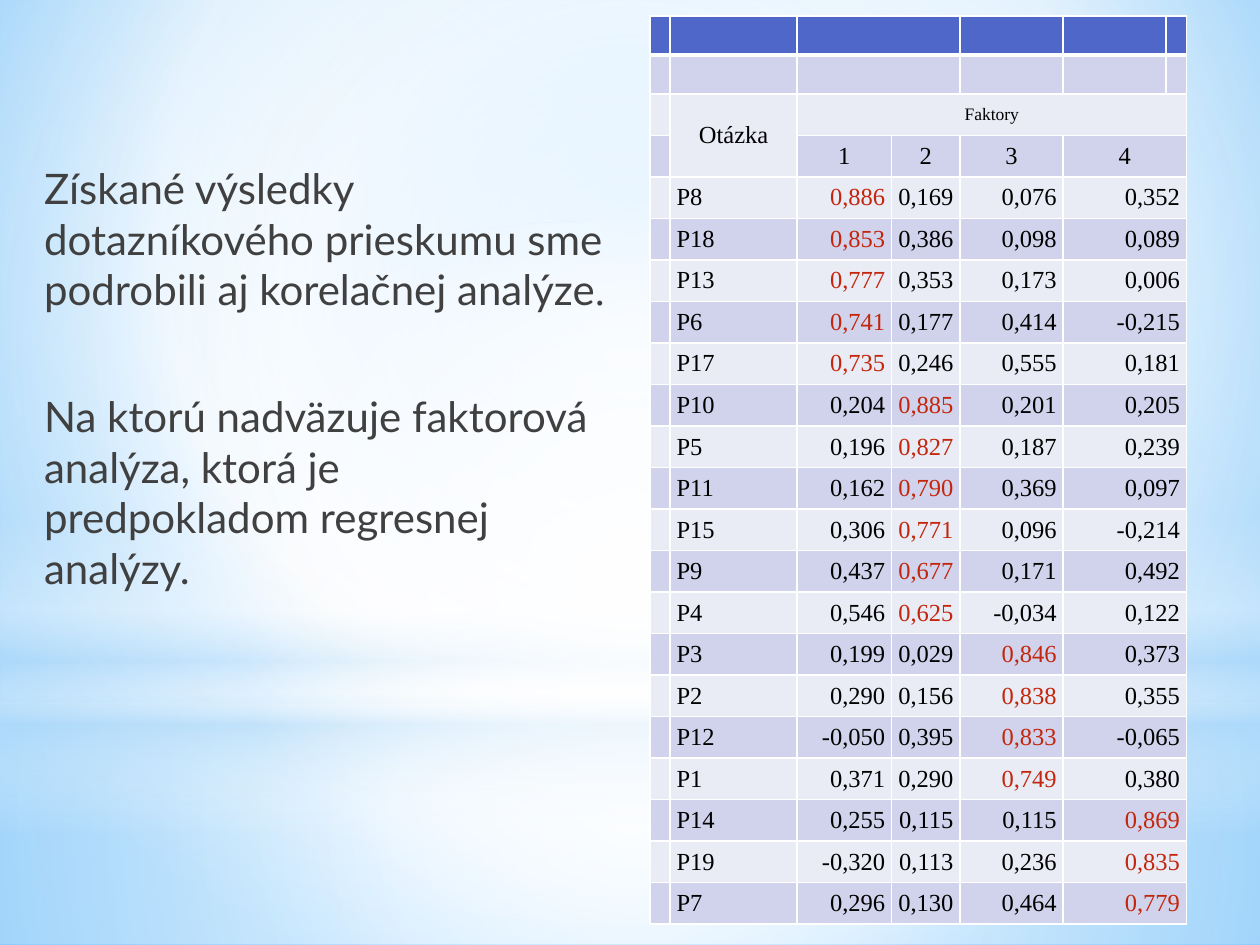
from lxml import etree
from pptx import Presentation
from pptx.dml.color import RGBColor
from pptx.enum import shapes, text
from pptx.oxml import ns
from pptx.util import Pt

BLACK = RGBColor(0, 0, 0)
GRAY = RGBColor(0x40, 0x40, 0x40)
RED = RGBColor(0xC3, 0x26, 0x0C)
HEAD = RGBColor(0x4E, 0x67, 0xC8)
BANDS = [RGBColor(0xE9, 0xEB, 0xF5), RGBColor(0xD0, 0xD3, 0xEB)]
WHITE = RGBColor(0xFF, 0xFF, 0xFF)
SKY = RGBColor(0xB4, 0xDC, 0xFA)
PALE = RGBColor(0x9E, 0xD5, 0xFF)
DEEP = RGBColor(0x5B, 0xB9, 0xFF)

SERIF, SANS = "Times New Roman", "Lato"
RECT, OVAL = shapes.MSO_SHAPE.RECTANGLE, shapes.MSO_SHAPE.OVAL
LEFT, MID, RIGHT = text.PP_ALIGN.LEFT, text.PP_ALIGN.CENTER, text.PP_ALIGN.RIGHT

# Gradient stops: place in %, colour, opacity in %
BASE = [(0, PALE, 100), (60, WHITE, 100), (100, DEEP, 100)]
CENTER = (50, 50, 50, 50)
LAYERS = [  # shape, box, stops, focus (None: top to bottom)
    (RECT, (0, 402, 720, 138),
     [(0, WHITE, 91), (37, WHITE, 76), (100, SKY, 79)], CENTER),
    (RECT, (0, 0, 720, 402),
     [(0, WHITE, 89), (48, WHITE, 62), (100, SKY, 79)], CENTER),
    (RECT, (0, 296.6, 720, 180),
     [(0, WHITE, 0), (29, WHITE, 30), (45, SKY, 40), (55, WHITE, 26),
      (65, SKY, 60), (100, WHITE, 0)], None),
    (OVAL, (0, 126, 720, 402), [(0, WHITE, 100), (56, WHITE, 0)], CENTER),
]

BODY = [  # space before, runs
    (0, [("Získané výsledky dotazníkového prieskumu sme podrobili "
          "aj korelačnej analýze", SANS), (".", SERIF)]),
    (44, [("Na ktorú nadväzuje faktorová analýza, ktorá je predpokladom "
           "regresnej analýzy.", SANS)]),
]

LOADS = [
    ("P8", "0,886", "0,169", "0,076", "0,352"),
    ("P18", "0,853", "0,386", "0,098", "0,089"),
    ("P13", "0,777", "0,353", "0,173", "0,006"),
    ("P6", "0,741", "0,177", "0,414", "-0,215"),
    ("P17", "0,735", "0,246", "0,555", "0,181"),
    ("P10", "0,204", "0,885", "0,201", "0,205"),
    ("P5", "0,196", "0,827", "0,187", "0,239"),
    ("P11", "0,162", "0,790", "0,369", "0,097"),
    ("P15", "0,306", "0,771", "0,096", "-0,214"),
    ("P9", "0,437", "0,677", "0,171", "0,492"),
    ("P4", "0,546", "0,625", "-0,034", "0,122"),
    ("P3", "0,199", "0,029", "0,846", "0,373"),
    ("P2", "0,290", "0,156", "0,838", "0,355"),
    ("P12", "-0,050", "0,395", "0,833", "-0,065"),
    ("P1", "0,371", "0,290", "0,749", "0,380"),
    ("P14", "0,255", "0,115", "0,115", "0,869"),
    ("P19", "-0,320", "0,113", "0,236", "0,835"),
    ("P7", "0,296", "0,130", "0,464", "0,779"),
]
COLS = [11.5, 72.5, 54, 39, 59, 59, 11.5]
TOP = 4  # rows above the loadings
ROWS = [22.2] * 2 + [23.75] * (len(LOADS) + 2)


def style(obj, **vals):
    for key, val in vals.items():
        setattr(obj, key, val)


def paint(owner, stops, focus):
    """Replace the solid fill of an XML element by a gradient."""
    grad = etree.Element(ns.qn("a:gradFill"), rotWithShape="1")
    chain = etree.SubElement(grad, ns.qn("a:gsLst"))
    for pos, color, alpha in stops:
        stop = etree.SubElement(chain, ns.qn("a:gs"), pos=str(pos * 1000))
        tone = etree.SubElement(stop, ns.qn("a:srgbClr"), val=str(color))
        if alpha < 100:
            etree.SubElement(tone, ns.qn("a:alpha"), val=str(alpha * 1000))
    if focus:
        way = etree.SubElement(grad, ns.qn("a:path"), {"path": "circle"})
        sides = {k: str(v * 1000) for k, v in zip("ltrb", focus)}
        etree.SubElement(way, ns.qn("a:fillToRect"), sides)
    else:
        etree.SubElement(grad, ns.qn("a:lin"), ang="5400000", scaled="0")
    owner.replace(owner.find(ns.qn("a:solidFill")), grad)


def write(para, words, face, size, color):
    run = para.add_run()
    run.text = words
    style(run.font, name=face, size=Pt(size), bold=False)
    run.font.color.rgb = color


def edge(cell, widths):
    """Draw white borders, widths given as left, right, top, bottom."""
    props = cell._tc.get_or_add_tcPr()
    for i, (side, width) in enumerate(zip("LRTB", widths)):
        line = etree.Element(ns.qn("a:ln" + side), w=str(Pt(width)))
        fill = etree.SubElement(line, ns.qn("a:solidFill"))
        etree.SubElement(fill, ns.qn("a:srgbClr"), val=str(WHITE))
        props.insert(i, line)


def put(cell, words, align, size=14, color=BLACK):
    para = cell.text_frame.paragraphs[0]
    para.alignment = align
    write(para, words, SERIF, size, color)


def backdrop(slide):
    slide.background.fill.solid()
    paint(slide.element.find(".//" + ns.qn("p:bgPr")), BASE, (20, 10, 20, 60))
    for kind, box, stops, focus in LAYERS:
        shape = slide.shapes.add_shape(kind, *map(Pt, box))
        shape.shadow.inherit = False
        shape.line.fill.background()
        shape.fill.solid()
        paint(shape.element.spPr, stops, focus)


def body(slide):
    title, block = slide.placeholders
    title.element.getparent().remove(title.element)
    slide.shapes.element.append(block.element)  # in front of the backdrop
    style(block, left=Pt(14.4), top=Pt(26), width=Pt(344), height=Pt(442))
    frame = block.text_frame
    style(frame, word_wrap=True, auto_size=text.MSO_AUTO_SIZE.NONE,
          vertical_anchor=text.MSO_ANCHOR.TOP, margin_left=Pt(10.8),
          margin_right=Pt(7.2), margin_top=Pt(67), margin_bottom=Pt(3.6))
    for i, (gap, runs) in enumerate(BODY):
        para = frame.add_paragraph() if i else frame.paragraphs[0]
        style(para, alignment=LEFT, space_before=Pt(gap), space_after=Pt(0),
              line_spacing=1.0)
        for words, face in runs:
            write(para, words, face, 24, GRAY)


def factors(slide):
    grid = slide.shapes.add_table(
        len(ROWS), len(COLS), Pt(371.5), Pt(9.2),
        Pt(sum(COLS)), Pt(sum(ROWS))).table
    style(grid, first_row=False, horz_banding=False)
    for col, width in zip(grid.columns, COLS):
        col.width = Pt(width)
    for r, (row, height) in enumerate(zip(grid.rows, ROWS)):
        row.height = Pt(height)
        for cell in row.cells:
            style(cell, margin_left=Pt(3.6), margin_right=Pt(3.6), margin_top=0,
                  margin_bottom=0, vertical_anchor=text.MSO_ANCHOR.MIDDLE)
            cell.fill.solid()
            cell.fill.fore_color.rgb = BANDS[r % 2] if r else HEAD
            edge(cell, (1, 1, 3 if r == 1 else 1, 1 if r else 3))

    spans = [((0, 2), (0, 3)), ((1, 2), (1, 3)), ((2, 1), (3, 1)),
             ((2, 2), (2, 6))]
    spans += [((r, 5), (r, 6)) for r in range(3, len(ROWS))]
    for first, last in spans:
        grid.cell(*first).merge(grid.cell(*last))

    put(grid.cell(2, 1), "Otázka", MID)
    put(grid.cell(2, 2), "Faktory", MID, 10)
    for c in range(1, 5):
        put(grid.cell(3, c + 1), str(c), MID)
    for r, (name, *loads) in enumerate(LOADS, TOP):
        put(grid.cell(r, 1), name, LEFT)
        peak = max(loads)
        for c, load in enumerate(loads, 2):
            put(grid.cell(r, c), load, RIGHT, color=RED if load == peak else BLACK)


def main():
    deck = Presentation()
    style(deck, slide_width=Pt(720), slide_height=Pt(540))
    slide = deck.slides.add_slide(deck.slide_layouts[2])
    backdrop(slide)
    body(slide)
    factors(slide)
    deck.save("out.pptx")


if __name__ == "__main__":
    main()
